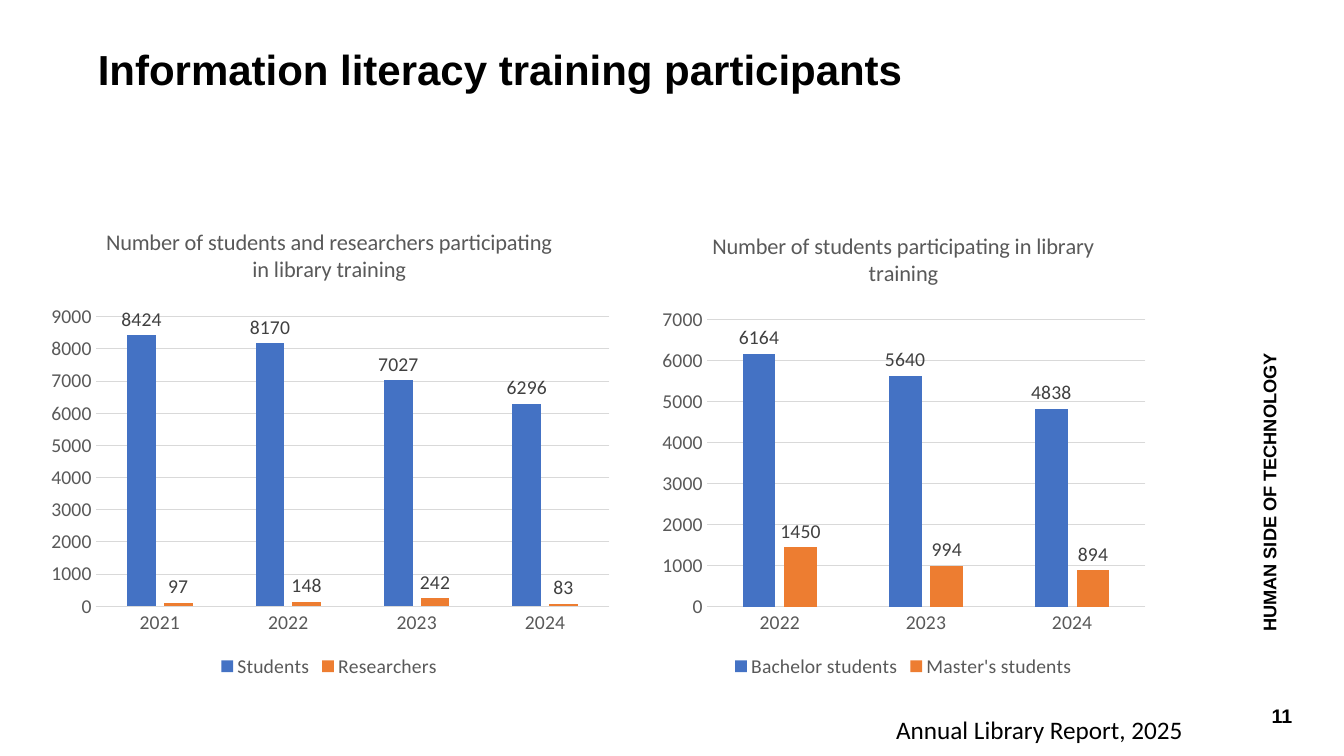
from lxml import etree
from pptx import Presentation
from pptx.chart.data import CategoryChartData
from pptx.dml.color import RGBColor
from pptx.enum.chart import XL_CHART_TYPE, XL_LABEL_POSITION, XL_LEGEND_POSITION, XL_TICK_MARK
from pptx.enum.text import MSO_ANCHOR, MSO_AUTO_SIZE, PP_ALIGN
from pptx.oxml.ns import qn
from pptx.util import Inches, Pt

CLUSTERED = XL_CHART_TYPE.COLUMN_CLUSTERED
OUTSIDE_END = XL_LABEL_POSITION.OUTSIDE_END
LEGEND_BOTTOM = XL_LEGEND_POSITION.BOTTOM
NO_TICK = XL_TICK_MARK.NONE
TOP, MIDDLE, BOTTOM = MSO_ANCHOR.TOP, MSO_ANCHOR.MIDDLE, MSO_ANCHOR.BOTTOM
NO_FIT = MSO_AUTO_SIZE.NONE
LEFT, CENTER = PP_ALIGN.LEFT, PP_ALIGN.CENTER
TITLE_ONLY = 5

COLORS = {
    "text": "000000",
    "axis": "595959",
    "label": "404040",
    "grid": "D9D9D9",
    "first": "4472C4",
    "second": "ED7D31",
}


def color(name):
    return RGBColor.from_string(COLORS[name])


def format_font(font, size, color_name, name="Calibri", bold=False):
    font.size = Pt(size)
    font.name = name
    font.bold = bold
    font.color.rgb = color(color_name)


def place(shape, left, top, width, height):
    shape.left, shape.top = Inches(left), Inches(top)
    shape.width, shape.height = Inches(width), Inches(height)


def write_text(shape, text, size=14, font="Arial", bold=True,
               align=LEFT, anchor=TOP, spacing=1.0):
    frame = shape.text_frame
    frame.text = text
    frame.word_wrap = True
    frame.auto_size = NO_FIT
    frame.vertical_anchor = anchor
    paragraph = frame.paragraphs[0]
    paragraph.alignment = align
    paragraph.line_spacing = spacing
    format_font(paragraph.runs[0].font, size, "text", font, bold)


def add_text(slide, box, text, **text_format):
    shape = slide.shapes.add_textbox(*map(Inches, box))
    write_text(shape, text, **text_format)
    return shape


def set_plot_layout(chart, **fractions):
    plot_area = chart.element.find(".//" + qn("c:plotArea"))
    for existing in plot_area.findall(qn("c:layout")):
        plot_area.remove(existing)
    layout = etree.Element(qn("c:layout"))
    manual = etree.SubElement(layout, qn("c:manualLayout"))
    settings = {"layoutTarget": "inner", "xMode": "edge", "yMode": "edge", **fractions}
    for tag, value in settings.items():
        etree.SubElement(manual, qn("c:" + tag)).set("val", str(value))
    plot_area.insert(0, layout)


def format_axes(chart, maximum):
    for axis in (chart.category_axis, chart.value_axis):
        axis.major_tick_mark = NO_TICK
        axis.minor_tick_mark = NO_TICK
        format_font(axis.tick_labels.font, 14, "axis")
    value_axis = chart.value_axis
    value_axis.minimum_scale = 0
    value_axis.maximum_scale = maximum
    value_axis.major_unit = 1000
    value_axis.format.line.fill.background()
    for line in (chart.category_axis.format.line, value_axis.major_gridlines.format.line):
        line.color.rgb = color("grid")
        line.width = Pt(0.75)


def add_column_chart(slide, box, title, categories, series, maximum, plot_layout):
    data = CategoryChartData()
    data.categories = categories
    for name, values in series.items():
        data.add_series(name, values)
    chart = slide.shapes.add_chart(CLUSTERED, *map(Inches, box), data).chart
    format_font(chart.font, 14, "text")

    chart.has_title = True
    chart.chart_title.include_in_layout = False
    title_frame = chart.chart_title.text_frame
    title_frame.text = title
    format_font(title_frame.paragraphs[0].runs[0].font, 16, "axis")

    chart.has_legend = True
    chart.legend.position = LEGEND_BOTTOM
    chart.legend.include_in_layout = False
    format_font(chart.legend.font, 14, "axis")

    format_axes(chart, maximum)
    plot = chart.plots[0]
    plot.gap_width = 219
    plot.overlap = -27
    plot.vary_by_categories = False
    for column, fill_name in zip(plot.series, ("first", "second")):
        column.format.fill.solid()
        column.format.fill.fore_color.rgb = color(fill_name)
        labels = column.data_labels
        labels.show_value = True
        labels.position = OUTSIDE_END
        format_font(labels.font, 14, "label")
    set_plot_layout(chart, **plot_layout)


def main():
    presentation = Presentation()
    presentation.slide_width = Inches(13.33)
    presentation.slide_height = Inches(7.5)
    slide = presentation.slides.add_slide(presentation.slide_layouts[TITLE_ONLY])

    title = slide.shapes.title
    place(title, 0.87, 0.44, 10.59, 1)
    write_text(title, "Information literacy training participants", size=30, spacing=0.9)

    add_text(slide, (12.21, 6.87, 1.01, 0.4), "11", align=CENTER, anchor=BOTTOM)
    side_label = add_text(slide, (10.15, 3.32, 4.81, 1.28), "HUMAN SIDE OF TECHNOLOGY",
                          size=13, anchor=MIDDLE, spacing=1.3)
    side_label.rotation = 270
    add_text(slide, (8.79, 7.04, 3.1, 0.4), "Annual Library Report, 2025",
             size=18, font="Calibri", bold=False)

    add_column_chart(
        slide, (0.37, 2.06, 5.79, 4.71),
        "Number of students and researchers participating in library training",
        ["2021", "2022", "2023", "2024"],
        {"Students": [8424, 8170, 7027, 6296], "Researchers": [97, 148, 242, 83]},
        maximum=9000, plot_layout={"x": 0.1, "y": 0.23, "w": 0.88, "h": 0.61})
    add_column_chart(
        slide, (6.46, 2.1, 5, 4.67),
        "Number of students participating in library training",
        ["2022", "2023", "2024"],
        {"Bachelor students": [6164, 5640, 4838], "Master's students": [1450, 994, 894]},
        maximum=7000, plot_layout={"x": 0.11, "y": 0.23, "w": 0.87, "h": 0.61})

    presentation.save("out.pptx")


if __name__ == "__main__":
    main()
